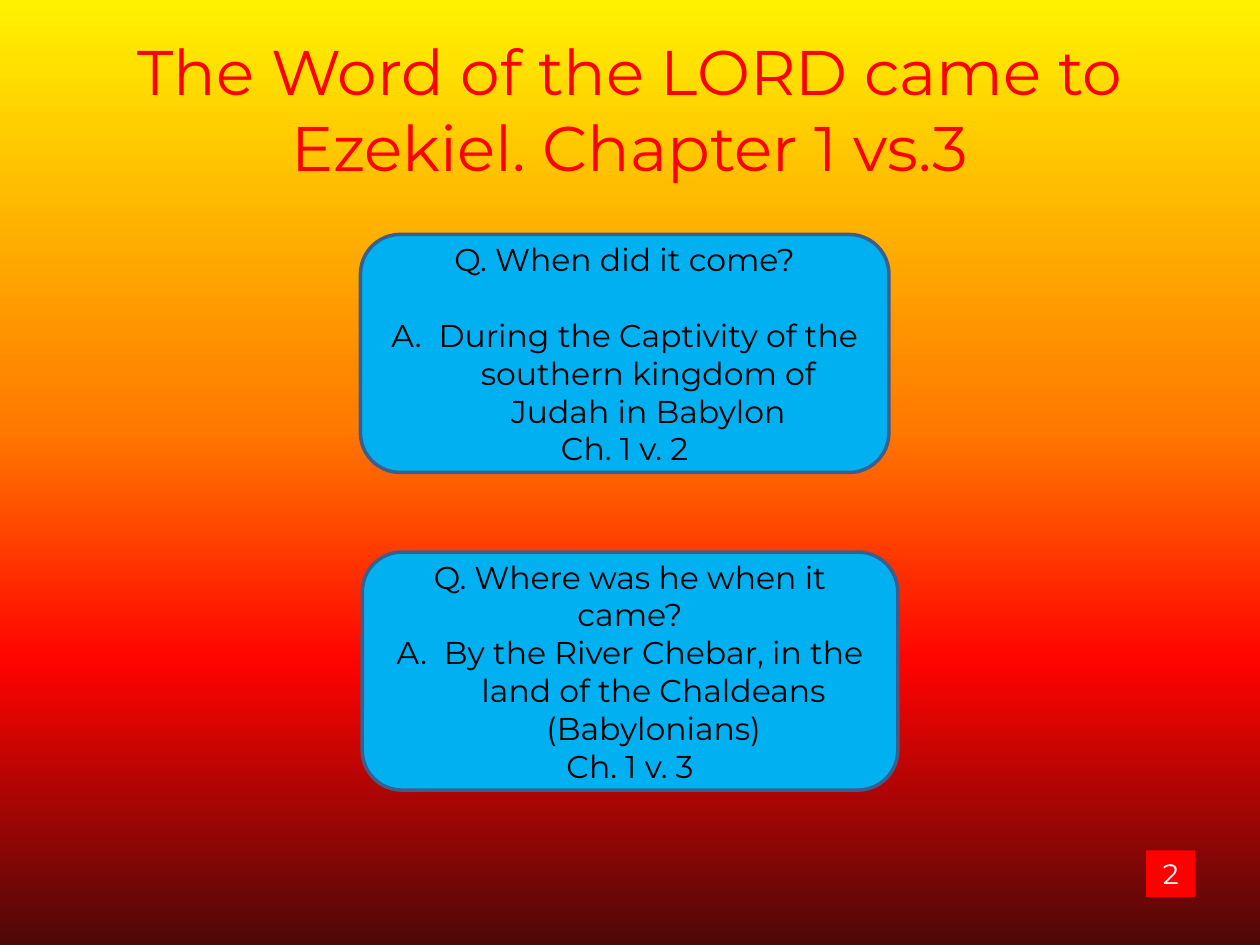
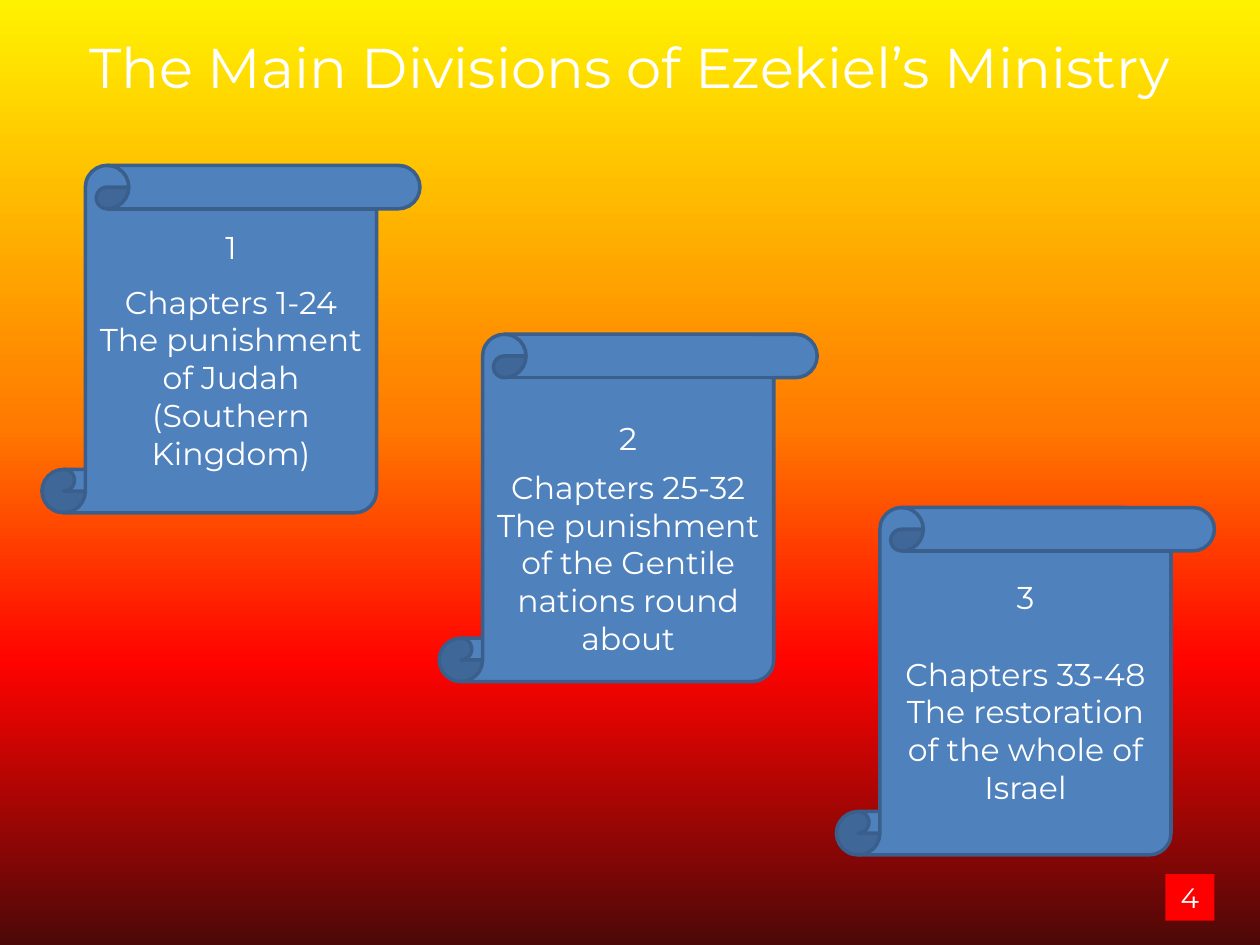
"""Build two slides on the book of Ezekiel: its setting and its main divisions."""
from dataclasses import dataclass

from lxml.etree import SubElement
from pptx import Presentation
from pptx.dml.color import RGBColor
from pptx.enum.shapes import MSO_SHAPE
from pptx.enum.text import MSO_ANCHOR, MSO_AUTO_SIZE, PP_ALIGN
from pptx.oxml.ns import qn
from pptx.util import Pt

FONT = "Montserrat"
RED, WHITE, BLACK = "FF0000", "FFFFFF", "000000"
SKY, STEEL, OUTLINE = "00B0F0", "4F81BD", "3A5F8C"
BACKGROUND_STOPS = [(0, "FFF200"), (45, "FF7A00"), (70, "FF0300"), (100, "4D0808")]
TITLE_ONLY_LAYOUT = 5
BODY_SIZE = 18
BLANK_LINE = 22
ANSWER_INDENT = 27
SCROLL_LEFT, SCROLL_STEP = 24, 227


@dataclass
class Line:
    text: str
    space_before: float = 0
    is_answer: bool = False


@dataclass
class Panel:
    left: float
    top: float
    width: float
    height: float
    lines: list[Line]
    extra_top_margin: float = 0


@dataclass
class PanelStyle:
    shape_type: MSO_SHAPE
    fill: str
    font_color: str
    line: str | None = OUTLINE
    size: float = BODY_SIZE


QUESTION_STYLE = PanelStyle(MSO_SHAPE.ROUNDED_RECTANGLE, SKY, BLACK)
SCROLL_STYLE = PanelStyle(MSO_SHAPE.VERTICAL_SCROLL, STEEL, WHITE)
BADGE_STYLE = PanelStyle(MSO_SHAPE.RECTANGLE, RED, WHITE, line=None, size=16)

QUESTIONS = [
    Panel(206, 134, 302, 136, [
        Line("Q. When did it come?"),
        Line("During the Captivity of the southern kingdom of Judah in Babylon",
             BLANK_LINE, True),
        Line("Ch. 1 v. 2"),
    ]),
    Panel(207, 315.5, 306, 136, [
        Line("Q. Where was he when it came?"),
        Line("By the River Chebar, in the land of the Chaldeans (Babylonians)",
             is_answer=True),
        Line("Ch. 1 v. 3"),
    ]),
]

DIVISIONS = [
    (94.5, 9.5, 0, "Chapters 1-24", "The punishment of Judah (Southern Kingdom)"),
    (191, 6, BLANK_LINE, "Chapters 25-32",
     "The punishment of the Gentile nations round about"),
    (290, BLANK_LINE, 0, "Chapters 33-48", "The restoration of the whole of Israel"),
]


def rgb(color: str) -> RGBColor:
    return RGBColor.from_string(color)


def paint_background(master) -> None:
    fill = master.background.fill
    fill.gradient()
    fill.gradient_angle = 270
    stop_list = master.element.find(".//" + qn("a:gsLst"))
    for stop in list(stop_list):
        stop_list.remove(stop)
    for percent, color in BACKGROUND_STOPS:
        stop = SubElement(stop_list, qn("a:gs"), pos=str(percent * 1000))
        SubElement(stop, qn("a:srgbClr"), val=color)


def format_paragraph(paragraph, size: float, color: str) -> None:
    paragraph.alignment = PP_ALIGN.CENTER
    paragraph.font.name = FONT
    paragraph.font.size = Pt(size)
    paragraph.font.color.rgb = rgb(color)


def letter_answer(paragraph) -> None:
    properties = paragraph._p.get_or_add_pPr()
    properties.set("marL", str(Pt(ANSWER_INDENT)))
    properties.set("indent", str(-Pt(ANSWER_INDENT)))
    SubElement(properties, qn("a:buAutoNum"), type="alphaUcPeriod")


def add_panel(slide, panel: Panel, style: PanelStyle):
    shape = slide.shapes.add_shape(style.shape_type, Pt(panel.left), Pt(panel.top),
                                   Pt(panel.width), Pt(panel.height))
    shape.shadow.inherit = False
    shape.fill.solid()
    shape.fill.fore_color.rgb = rgb(style.fill)
    if style.line:
        shape.line.color.rgb = rgb(style.line)
        shape.line.width = Pt(2)
    else:
        shape.line.fill.background()
    frame = shape.text_frame
    frame.word_wrap = True
    frame.vertical_anchor = MSO_ANCHOR.MIDDLE
    frame.margin_top = Pt(3.6 + panel.extra_top_margin)
    for index, line in enumerate(panel.lines):
        paragraph = frame.add_paragraph() if index else frame.paragraphs[0]
        paragraph.text = line.text
        format_paragraph(paragraph, style.size, style.font_color)
        if line.space_before:
            paragraph.space_before = Pt(line.space_before)
        if line.is_answer:
            letter_answer(paragraph)
    return shape


def add_badge(slide, number: str, left: float, top: float) -> None:
    badge = add_panel(slide, Panel(left, top, 28, 26.6, [Line(number)]), BADGE_STYLE)
    badge.text_frame.word_wrap = False


def add_titled_slide(presentation, text: str, height: float, size: float, color: str):
    slide = presentation.slides.add_slide(presentation.slide_layouts[TITLE_ONLY_LAYOUT])
    title = slide.shapes.title
    title.left, title.top = Pt(0), Pt(15)
    title.width, title.height = presentation.slide_width, Pt(height)
    frame = title.text_frame
    frame.text = text
    frame.word_wrap = True
    frame.auto_size = MSO_AUTO_SIZE.NONE
    frame.vertical_anchor = MSO_ANCHOR.TOP
    format_paragraph(frame.paragraphs[0], size, color)
    return slide


def build_questions(presentation) -> None:
    slide = add_titled_slide(
        presentation, "The Word of the LORD came to Ezekiel. Chapter 1 vs.3", 94, 36, RED)
    for panel in QUESTIONS:
        add_panel(slide, panel, QUESTION_STYLE)
    add_badge(slide, "2", 655, 486)


def build_divisions(presentation) -> None:
    slide = add_titled_slide(
        presentation, "The Main Divisions of Ezekiel’s Ministry", 46, 32, WHITE)
    for index, (top, gap, margin, chapters, theme) in enumerate(DIVISIONS):
        lines = [Line(str(index + 1)), Line(chapters, gap), Line(theme)]
        left = SCROLL_LEFT + index * SCROLL_STEP
        add_panel(slide, Panel(left, top, 216, 198.5, lines, margin), SCROLL_STYLE)
    add_badge(slide, "4", 666, 499.5)


def main() -> None:
    presentation = Presentation()
    presentation.slide_width, presentation.slide_height = Pt(720), Pt(540)
    paint_background(presentation.slide_master)
    build_questions(presentation)
    build_divisions(presentation)
    presentation.save("out.pptx")


if __name__ == "__main__":
    main()
